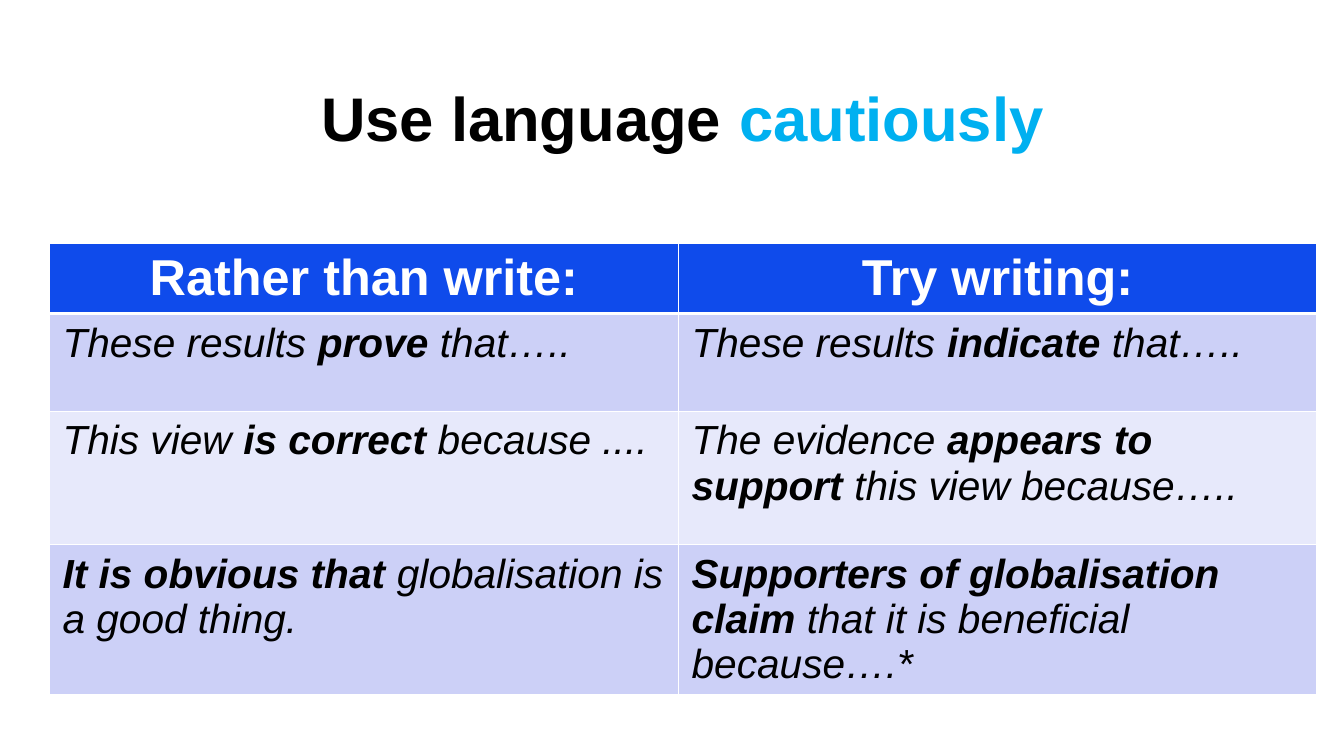
from lxml import etree
from pptx import Presentation
from pptx.dml.color import RGBColor
from pptx.enum import text as t
from pptx.oxml.ns import qn
from pptx.util import Inches, Pt

HEADS = ["Rather than write:", "Try writing:"]
ROWS = [
    ["These results *prove* that…..", "These results *indicate* that….."],
    ["This view *is correct *because ....",
     "The evidence *appears to support *this view because….."],
    ["*It is obvious that *globalisation is a good thing.",
     "*Supporters of globalisation claim *that it is beneficial because….*"],
]
WIDTHS = [6.24, 6.33]
HEIGHTS = [0.69, 0.97, 1.32, 1.49]
BANDS = ["CCD0F7", "E7E9FB"]


def paint(color, value):
    color.rgb = RGBColor.from_string(value)


def style(font, size, value):
    font.name = "Arial"
    font.size = Pt(size)
    paint(font.color, value)


def add_title(slide):
    title = slide.shapes.title
    title.left, title.top = Inches(0.63), Inches(0.76)
    title.width, title.height = Inches(12.28), Inches(0.9)
    frame = title.text_frame
    frame.vertical_anchor = t.MSO_ANCHOR.MIDDLE
    line = frame.paragraphs[0]
    line.alignment = t.PP_ALIGN.CENTER
    line.line_spacing = 0.9
    style(line.font, 44, "000000")
    line.font.bold = True
    line.add_run().text = "Use language "
    key = line.add_run()
    key.text = "cautiously"
    paint(key.font.color, "00B0F0")


def add_edges(cell, base, top):
    props = cell._tc.get_or_add_tcPr()
    sides = [("lnL", 1), ("lnR", 1), ("lnT", top), ("lnB", base)]
    for place, (side, width) in enumerate(sides):
        edge = etree.Element(qn("a:" + side), w=str(Pt(width)))
        fill = etree.SubElement(edge, qn("a:solidFill"))
        etree.SubElement(fill, qn("a:srgbClr"), val="FFFFFF")
        props.insert(place, edge)


def set_cell(cell, fill, base=1, top=1):
    cell.fill.solid()
    paint(cell.fill.fore_color, fill)
    cell.margin_left = cell.margin_right = Inches(0.13)
    cell.margin_top = cell.margin_bottom = Inches(0.07)
    add_edges(cell, base, top)
    return cell.text_frame.paragraphs[0]


def add_head(cell, words):
    line = set_cell(cell, "0F4BEB", base=3)
    line.text = words
    line.alignment = t.PP_ALIGN.CENTER
    style(line.font, 36, "FFFFFF")
    line.font.bold = True


def add_phrase(cell, words, fill, top):
    line = set_cell(cell, fill, top=top)
    style(line.font, 29, "000000")
    line.font.italic = True
    line.font.bold = False
    plain, strong, rest = words.split("*", 2)
    for part, bold in [(plain, False), (strong, True), (rest, False)]:
        if part:
            run = line.add_run()
            run.text = part
            run.font.bold = bold


def add_grid(slide):
    table = slide.shapes.add_table(
        len(HEIGHTS), len(WIDTHS), Inches(0.49), Inches(2.41),
        Inches(sum(WIDTHS)), Inches(sum(HEIGHTS))).table
    for col, width in zip(table.columns, WIDTHS):
        col.width = Inches(width)
    for row, height in zip(table.rows, HEIGHTS):
        row.height = Inches(height)
    for c, words in enumerate(HEADS):
        add_head(table.cell(0, c), words)
    for r, pair in enumerate(ROWS):
        for c, words in enumerate(pair):
            add_phrase(table.cell(r + 1, c), words, BANDS[r % 2],
                       3 if r == 0 else 1)


def main():
    deck = Presentation()
    deck.slide_width, deck.slide_height = Inches(13.33), Inches(7.5)
    slide = deck.slides.add_slide(deck.slide_layouts[5])
    add_title(slide)
    add_grid(slide)
    deck.save("out.pptx")


if __name__ == "__main__":
    main()
